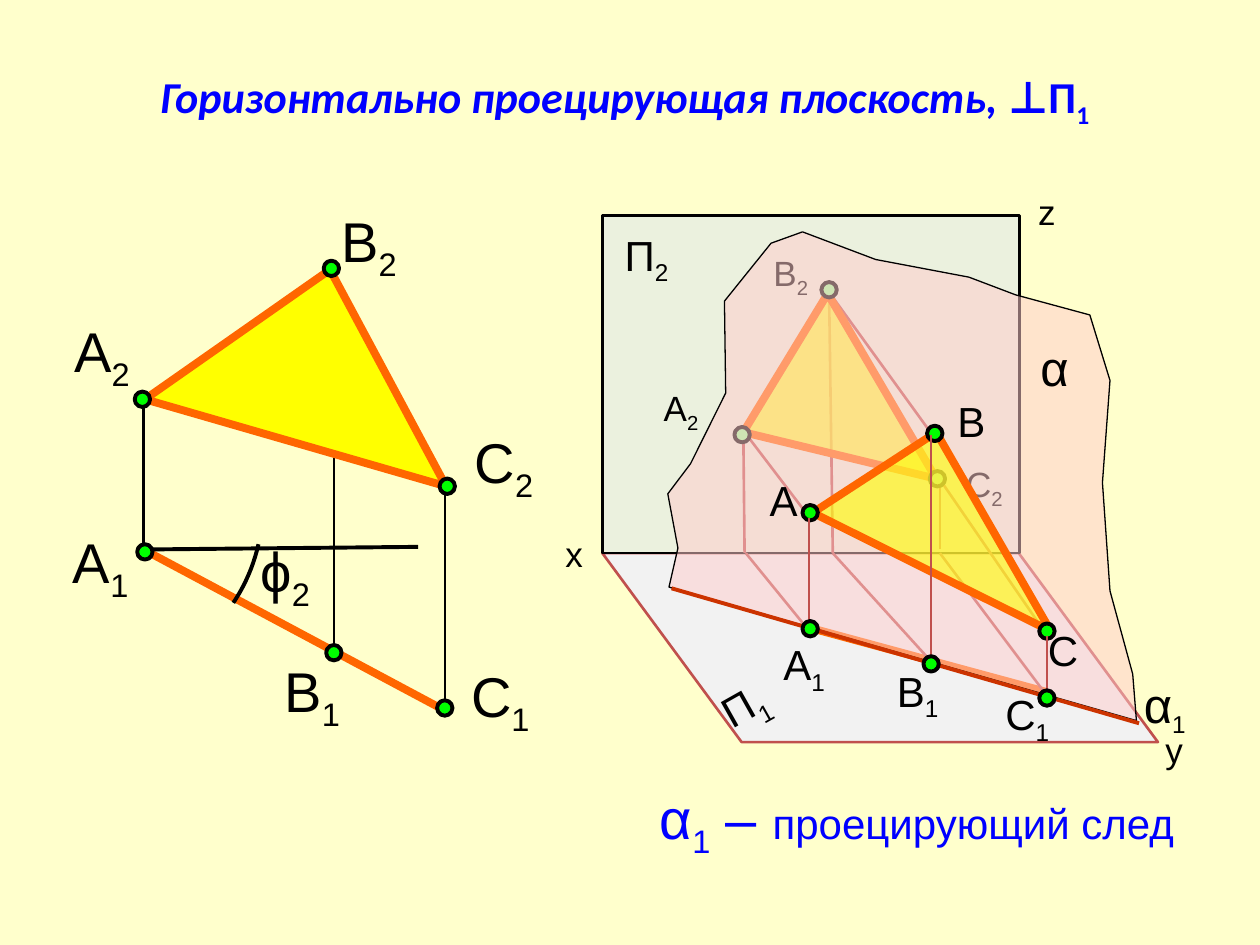
from dataclasses import dataclass
from math import cos, radians, sin

from lxml import etree
from pptx import Presentation
from pptx.dml.color import RGBColor
from pptx.enum import shapes, text
from pptx.oxml.ns import qn
from pptx.util import Pt


@dataclass(frozen=True)
class Theme:
    background: str = "FFFFCC"
    ink: str = "000000"
    accent: str = "0000FF"
    edge: str = "FF6600"
    ray: str = "C0504D"
    trace: str = "CC3300"
    face: str = "FFFF00"
    plane: str = "FFCCCC"
    wall: str = "EBF1DE"
    floor: str = "F2F2F2"
    dot: str = "00FF00"
    pale_dot: str = "99FF99"
    font: str = "Arial"
    title_font: str = "Calibri"
    title: float = 25.2
    large: int = 32
    medium: int = 28
    normal: int = 24
    small: int = 20


@dataclass(frozen=True)
class Box:
    left: float
    top: float
    width: float
    height: float

    def at(self, x, y):
        return Pt(self.left + x), Pt(self.top + y)


THEME = Theme()


def paint(shape, fill, line, width, opacity=100):
    shape.shadow.inherit = False
    if fill:
        shape.fill.solid()
        shape.fill.fore_color.rgb = RGBColor.from_string(fill)
        if opacity < 100:
            color = shape.fill._xPr.find(qn("a:solidFill"))[0]
            etree.SubElement(color, qn("a:alpha"), val=str(opacity * 1000))
    else:
        shape.fill.background()
    shape.line.color.rgb = RGBColor.from_string(line)
    shape.line.width = Pt(width)


def add_line(slide, box, start, end, color, width=1.5):
    line = slide.shapes.add_connector(
        shapes.MSO_CONNECTOR.STRAIGHT, *box.at(*start), *box.at(*end))
    line.line.color.rgb = RGBColor.from_string(color)
    line.line.width = Pt(width)
    etree.SubElement(line._element.spPr, qn("a:effectLst"))


def add_preset(slide, box, kind, x, y, width, height, fill, line, weight=1.5):
    shape = slide.shapes.add_shape(kind, *box.at(x, y), Pt(width), Pt(height))
    paint(shape, fill, line, weight)
    return shape


def add_dots(slide, box, centers, fill=THEME.dot, size=8.8):
    for x, y in centers:
        add_preset(slide, box, shapes.MSO_SHAPE.OVAL, x - size / 2, y - size / 2,
                   size, size, fill, THEME.ink, 2.25)


def add_outline(slide, box, points, fill, line, width, opacity=100, close=True):
    start, *others = [box.at(*point) for point in points]
    builder = slide.shapes.build_freeform(*start)
    builder.add_line_segments(others, close=close)
    paint(builder.convert_to_shape(), fill, line, width, opacity)


def add_run(paragraph, words, subscript=False):
    run = paragraph.add_run()
    run.text = words
    if subscript:
        run._r.get_or_add_rPr().set("baseline", "-25000")
    return run


def add_paragraph_box(slide, box, size, color, font=THEME.font, wrap=False):
    shape = slide.shapes.add_textbox(*box.at(0, 0), Pt(box.width), Pt(box.height))
    frame = shape.text_frame
    frame.word_wrap = wrap
    frame.auto_size = text.MSO_AUTO_SIZE.SHAPE_TO_FIT_TEXT
    paragraph = frame.paragraphs[0]
    paragraph.font.size = Pt(size)
    paragraph.font.name = font
    paragraph.font.color.rgb = RGBColor.from_string(color)
    return shape, paragraph


def add_label(slide, box, name, x, y, size, rotation=0):
    width = 14.4 + size * (1.04 if len(name) > 1 else 0.65)
    area = Box(box.left + x, box.top + y, width, 7.2 + 1.2 * size)
    shape, paragraph = add_paragraph_box(slide, area, size, THEME.ink, wrap=rotation != 0)
    shape.rotation = rotation
    add_run(paragraph, name[0])
    if name[1:]:
        subscript = add_run(paragraph, name[1:], True)
        if size == THEME.medium:
            subscript.font.size = Pt(THEME.normal)


def add_labels(slide, box, size, labels):
    for name, x, y in labels:
        add_label(slide, box, name, x, y, size)


def add_title(slide, box):
    shape, paragraph = add_paragraph_box(
        slide, box, THEME.title, THEME.accent, THEME.title_font, True)
    paragraph.alignment = text.PP_ALIGN.CENTER
    paragraph.font.bold = True
    add_run(paragraph, "Горизонтально проецирующая плоскость, ").font.italic = True
    add_run(paragraph, "⊥П")
    add_run(paragraph, "1", True)


def add_caption(slide, box):
    shape, paragraph = add_paragraph_box(slide, box, THEME.large, THEME.accent)
    add_run(paragraph, "α")
    add_run(paragraph, "1", True)
    add_run(paragraph, " – ")
    add_run(paragraph, "проецирующий след").font.size = Pt(THEME.normal)


def add_projections(slide, box):
    a1, b1, c1 = (46.8, 207.4), (154.8, 265), (218.2, 296.6)
    a2, b2, c2 = (45.4, 120.2), (153.4, 45.4), (219.6, 169.9)
    add_line(slide, box, (46, 206), (218.2, 298), THEME.edge, 4.5)
    for x, top, bottom in [(46, 121, 206), (218.2, 171.4, 296), (154.8, 44, 266.4)]:
        add_line(slide, box, (x, top), (x, bottom), THEME.ink)
    add_labels(slide, box, THEME.large, [
        ("А2", -0.7, 69.1), ("В2", 151.9, 6.5), ("С2", 228.2, 132.5),
        ("А1", -1.4, 190.1), ("В1", 119.5, 263.5), ("С1", 226.1, 266.4),
        ("ϕ2", 105.8, 195.1)])
    add_line(slide, box, (46, 206), (203, 204.5), THEME.ink, 2.25)
    angles = [radians(12.6 + 2.12 * step) for step in range(11)]
    arc = [(15.1 + 99 * cos(angle), 181.4 + 99 * sin(angle)) for angle in angles]
    add_outline(slide, box, arc, None, THEME.ink, 2.25, close=False)
    add_outline(slide, box, [(46.8, 120.2), (152.6, 46.1), (218.9, 169.9)],
                THEME.face, THEME.edge, 4.5)
    add_dots(slide, box, [a1, b1, c1, a2, b2, c2])


def add_space_model(slide, box):
    floor = add_preset(slide, box, shapes.MSO_SHAPE.PARALLELOGRAM,
                       28.2, 211.1, 317.5, 108, THEME.floor, THEME.ray)
    floor.adjustments[0] = 0.737
    floor._element.spPr.xfrm.set("flipH", "1")
    add_preset(slide, box, shapes.MSO_SHAPE.RECTANGLE,
               28.2, 18.1, 238.3, 193, THEME.wall, THEME.ink)
    add_line(slide, box, (146.2, 253.6), (281.6, 290.3), THEME.edge, 4.5)
    add_label(slide, box, "П1", 89.4, 279.5, THEME.normal, 330.6)
    add_labels(slide, box, THEME.normal, [
        ("П2", 33.9, 22.4), ("А1", 124.6, 256.4), ("В1", 189.4, 271.6),
        ("С1", 251.4, 285.2)])
    add_line(slide, box, (266.5, 62.8), (266.5, 211.1), THEME.ink)
    for start, end in [
            ((144.8, 253.6), (110.2, 211.1)), ((109.5, 211.1), (108.8, 146.3)),
            ((146.2, 190.2), (109.5, 142)), ((216.1, 273), (159.9, 211.1)),
            ((159.9, 211.1), (157.8, 63.5)), ((214.6, 140.5), (157.8, 62)),
            ((281.6, 291.7), (221.1, 211.1)), ((221.1, 208.9), (221.1, 170.8)),
            ((280.2, 255), (221.8, 170))]:
        add_line(slide, box, start, end, THEME.ray)
    add_labels(slide, box, THEME.small, [
        ("А2", 56.2, 112.4), ("В2", 118.9, 35.4), ("С2", 229, 155.6),
        ("х", 0, 196), ("у", 342.8, 307.6), ("z", 270.1, 0.1)])
    add_outline(slide, box, [(108.8, 142), (157, 62.8), (219, 168.6)],
                THEME.face, THEME.edge, 4.5, 72)
    add_dots(slide, box, [(157.8, 60.6), (108.1, 143.4), (219.7, 168.6)], THEME.pale_dot)
    add_outline(slide, box, [
        (333.4, 306.8), (66.3, 230.5), (71.4, 208.2), (65.6, 177.2), (78.6, 160),
        (98.7, 119.6), (98, 67.1), (124.6, 34), (142.6, 27.5), (184.4, 43.3),
        (237.7, 53.4), (264.3, 63.5), (306.8, 75), (318.3, 112.4), (314, 170.8),
        (318.3, 232.7), (331.3, 280.2)], THEME.plane, THEME.ink, 0.75, 52)
    add_labels(slide, box, THEME.normal, [
        ("А", 116.7, 162.8), ("В", 224, 117.5), ("С", 275.8, 248.5)])
    add_outline(slide, box, [(148.4, 188), (219, 142), (284.5, 255.7)],
                THEME.face, THEME.edge, 4.5, 60)
    add_dots(slide, box, [(282.3, 255.7), (147, 188), (218.2, 142.7)])
    for x, top, bottom in [(216.1, 143.4, 274.4), (282.3, 258.6, 293.2),
                           (146.2, 190.9, 257.2)]:
        add_line(slide, box, (x, top), (x, bottom), THEME.ray)
    add_line(slide, box, (67.8, 231.2), (334.9, 308.3), THEME.trace, 2.25)
    add_dots(slide, box, [(216.1, 274.4), (147, 254.3), (282.3, 293.9)])
    add_labels(slide, box, THEME.medium, [("α", 271.5, 84.4), ("α1", 330.6, 276.6)])


def main():
    presentation = Presentation()
    presentation.slide_width, presentation.slide_height = Pt(720), Pt(540)
    slide = presentation.slides.add_slide(presentation.slide_layouts[6])
    slide.background.fill.solid()
    slide.background.fill.fore_color.rgb = RGBColor.from_string(THEME.background)
    add_title(slide, Box(0, 36, 714, 38))
    add_space_model(slide, Box(316, 105, 368, 339))
    add_caption(slide, Box(370, 444.2, 311.8, 45.6))
    add_projections(slide, Box(36, 108, 276, 312))
    presentation.save("out.pptx")


if __name__ == "__main__":
    main()
